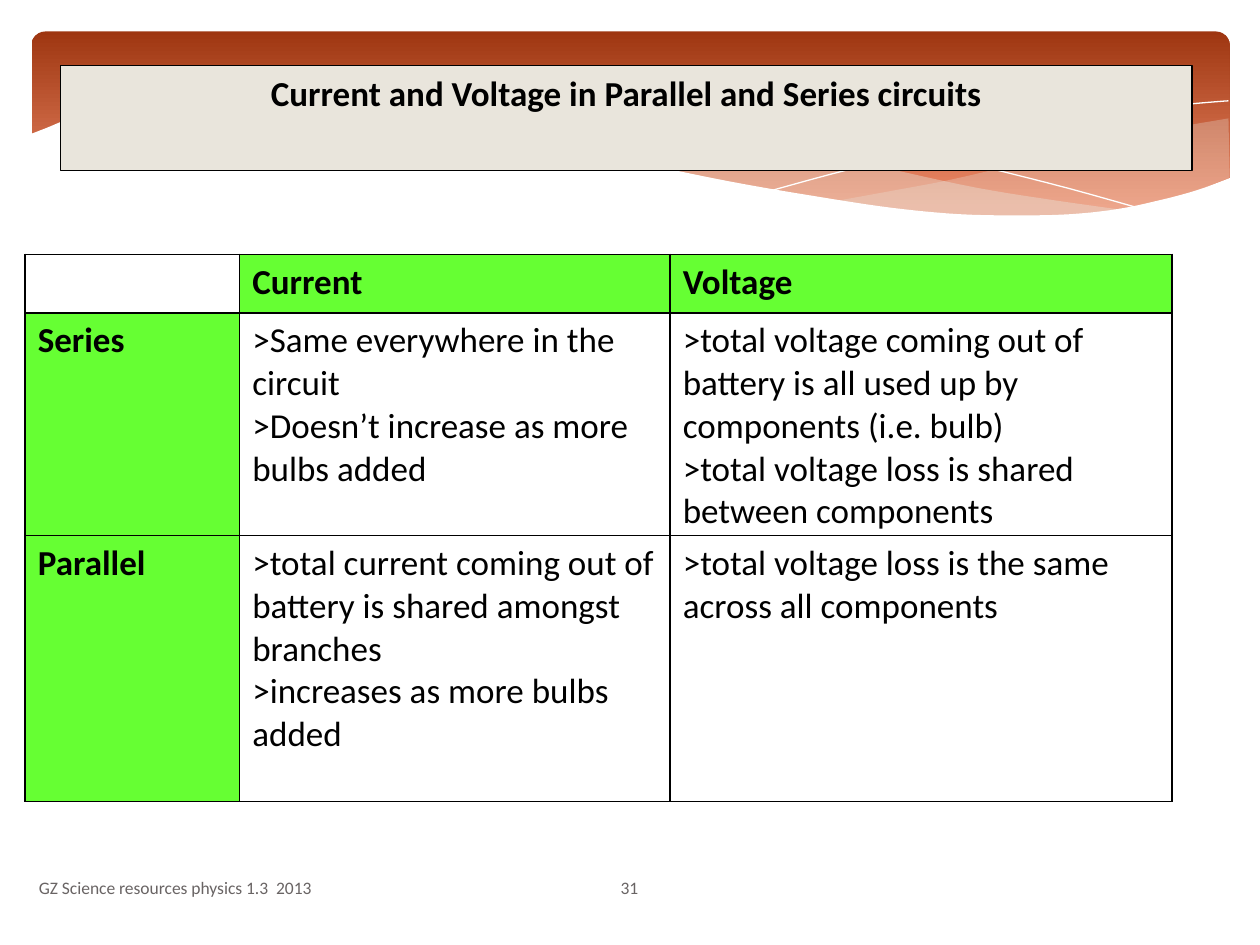
"""Build the slide comparing current and voltage in series and parallel circuits."""
from dataclasses import dataclass
from typing import Optional

from lxml.etree import SubElement
from pptx import Presentation
from pptx.dml.color import RGBColor
from pptx.enum.shapes import MSO_SHAPE as Shape
from pptx.enum.text import MSO_ANCHOR as Anchor, MSO_AUTO_SIZE as AutoSize, PP_ALIGN as Align
from pptx.oxml.ns import qn
from pptx.util import Pt

BLACK = RGBColor(0x00, 0x00, 0x00)
WHITE = RGBColor(0xFF, 0xFF, 0xFF)
GREEN = RGBColor(0x66, 0xFF, 0x33)
CREAM = RGBColor(0xE9, 0xE5, 0xDC)
GREY = RGBColor(0x69, 0x64, 0x64)
RUST = RGBColor(0x9E, 0x36, 0x11)
CORAL = RGBColor(0xEF, 0x8C, 0x6A)
FONT = "Calibri"


@dataclass
class Wave:
    """One curved layer of the banner, made of smooth edges joined in turn."""
    edges: list
    fill: Optional[RGBColor] = None
    alpha: int = 100


@dataclass
class Label:
    """A line of footer text."""
    text: str
    left: float
    width: float
    align: Align


WAVES = [
    Wave([[(702, 67.7), (673, 72.7), (641.5, 79.2), (620, 85), (579.6, 94.3), (542, 103),
           (508, 109.4), (476, 115.2)],
          [(476, 115.2), (507.6, 118.8), (536.4, 121.7), (570, 123.8), (601, 123.8),
           (628, 121.7), (651.6, 117.4), (678, 110.9), (702.7, 101.5)]], CREAM, 29),
    Wave([[(643, 120.2), (602.6, 114.5), (558, 107.3), (508.3, 96.5), (452.9, 83.5),
           (409.7, 73.4), (370, 66.2), (334.8, 61.9), (302.4, 59), (273.6, 57.6),
           (247.7, 57.6), (225.4, 59), (206, 61.9)],
          [(206, 61.9), (246, 67.7), (291, 76.3), (323.3, 83.5), (381.6, 97.2),
           (432.7, 108), (478.8, 115.9), (519.8, 121), (556.6, 123.8), (589, 124.6),
           (617, 123.1), (643, 120.2)]], CREAM, 40),
    Wave([[(222.5, 64.8), (236.2, 61.9), (261.4, 59.8), (299.5, 58.3), (352, 60.5),
           (400.3, 65.5), (458, 74.2), (523.4, 86.4), (598.3, 104.4), (653, 119.5)]]),
    Wave([[(441.4, 108.7), (483.8, 97.2), (538.6, 84.2), (580.3, 74.9), (623.5, 67),
           (655.2, 61.9), (684.7, 59), (702, 57.6)]]),
    Wave([[(703.4, 101.5), (684, 108.7), (662.4, 114.5), (638.6, 119.5), (612, 122.4),
           (582.5, 123.1), (548, 122.4), (509.8, 118.8), (466.6, 112.3), (416.9, 103.7),
           (362, 92.2), (321.8, 82.1), (281.5, 73.4), (244.8, 66.2), (210.2, 61.2),
           (180, 58.3), (152, 56.2), (127.4, 56.2), (95, 58.3), (68.4, 61.2),
           (42.5, 67), (25.9, 73.4), (16.6, 77)],
          [(16.6, 161), (703.4, 161)]], WHITE),
]
LABELS = [
    Label("GZ Science resources physics 1.3  2013", 15.1, 298, Align.LEFT),
    Label("31", 314, 91.4, Align.CENTER),
]
COLUMNS = [122.6, 246, 286.8]
ROWS = [33.4, 127, 152]
CELLS = [
    ["", "Current", "Voltage"],
    ["Series",
     ">Same everywhere in the circuit\n>Doesn’t increase as more bulbs added",
     ">total voltage coming out of battery is all used up by components (i.e. bulb)\n"
     ">total voltage loss is shared between components"],
    ["Parallel",
     ">total current coming out of battery is shared amongst branches\n"
     ">increases as more bulbs added",
     ">total voltage loss is the same across all components"],
]


def smooth(points: list, steps: int = 5) -> list:
    """Return a Catmull-Rom curve through the points."""
    ends = [points[0], *points, points[-1]]
    curve = [points[0]]
    for a, b, c, d in zip(ends, ends[1:], ends[2:], ends[3:]):
        for t in (i / steps for i in range(1, steps + 1)):
            curve.append(tuple(
                (2 * q + (r - p) * t + (2 * p - 5 * q + 4 * r - u) * t ** 2
                 + (3 * q - p - 3 * r + u) * t ** 3) / 2
                for p, q, r, u in zip(a, b, c, d)))
    return curve


def style_text(tf, size: float, color: RGBColor, bold: bool = False,
               align: Align = Align.LEFT) -> None:
    """Format every run of a text frame alike."""
    for p in tf.paragraphs:
        p.alignment = align
        for r in p.runs:
            r.font.name, r.font.size, r.font.bold = FONT, Pt(size), bold
            r.font.color.rgb = color


def add_banner(s) -> None:
    """Draw the rounded gradient panel behind the waves."""
    sp = s.shapes.add_shape(Shape.ROUNDED_RECTANGLE, Pt(18), Pt(18), Pt(684.7), Pt(112.3))
    sp.adjustments[0] = 0.07
    sp.shadow.inherit = False
    sp.line.fill.background()
    sp.fill.gradient()
    sp.fill.gradient_angle = 270
    for stop, color, position in zip(sp.fill.gradient_stops, (RUST, CORAL), (0, 0.9)):
        stop.color.rgb, stop.position = color, position


def add_wave(s, wave: Wave) -> None:
    """Draw a filled wave, or a thin white line when it has no fill."""
    points = [(Pt(x), Pt(y)) for edge in wave.edges for x, y in smooth(edge)]
    builder = s.shapes.build_freeform(*points[0])
    builder.add_line_segments(points[1:], close=wave.fill is not None)
    sp = builder.convert_to_shape()
    sp.shadow.inherit = False
    if wave.fill is None:
        sp.fill.background()
        sp.line.color.rgb = WHITE
        sp.line.width = Pt(0)
        return
    sp.line.fill.background()
    sp.fill.solid()
    sp.fill.fore_color.rgb = wave.fill
    if wave.alpha < 100:
        color = next(sp.element.iter(qn("a:srgbClr")))
        SubElement(color, qn("a:alpha"), val=str(wave.alpha * 1000))


def add_label(s, label: Label) -> None:
    """Add one footer text."""
    sp = s.shapes.add_textbox(Pt(label.left), Pt(492.5), Pt(label.width), Pt(28.8))
    tf = sp.text_frame
    tf.word_wrap = True
    tf.vertical_anchor = Anchor.MIDDLE
    tf.text = label.text
    style_text(tf, 10, GREY, align=label.align)


def add_borders(cell) -> None:
    """Give a cell thin black edges, placed before its fill."""
    tc_pr = cell._tc.get_or_add_tcPr()
    for i, side in enumerate(("lnL", "lnR", "lnT", "lnB")):
        ln = SubElement(tc_pr, qn(f"a:{side}"), w=str(Pt(1)))
        fill = SubElement(ln, qn("a:solidFill"))
        SubElement(fill, qn("a:srgbClr"), val=str(BLACK))
        tc_pr.insert(i, ln)


def add_comparison(s) -> None:
    """Add the table of current and voltage rules."""
    frame = s.shapes.add_table(len(ROWS), len(COLUMNS), Pt(14.4), Pt(145.4),
                               Pt(sum(COLUMNS)), Pt(sum(ROWS)))
    table = frame.table
    table.first_row = table.horz_banding = False
    for column, width in zip(table.columns, COLUMNS):
        column.width = Pt(width)
    for i, (row, height) in enumerate(zip(table.rows, ROWS)):
        row.height = Pt(height)
        for j, cell in enumerate(row.cells):
            header = i == 0 or j == 0
            cell.text = CELLS[i][j]
            style_text(cell.text_frame, 20, BLACK, header)
            if i == j == 0:
                cell.fill.background()
            else:
                cell.fill.solid()
                cell.fill.fore_color.rgb = GREEN if header else WHITE
            add_borders(cell)


def add_title(s) -> None:
    """Fill the title placeholder and bring it to the front."""
    sp = s.shapes.title
    sp.left, sp.top, sp.width, sp.height = Pt(34.6), Pt(37.4), Pt(646.6), Pt(31.7)
    sp.fill.solid()
    sp.fill.fore_color.rgb = CREAM
    sp.line.color.rgb = BLACK
    sp.line.width = Pt(0.75)
    tf = sp.text_frame
    tf.text = "Current and Voltage in Parallel and Series circuits"
    tf.word_wrap = True
    tf.auto_size = AutoSize.SHAPE_TO_FIT_TEXT
    tf.vertical_anchor = Anchor.TOP
    style_text(tf, 20, BLACK, True, Align.CENTER)
    sp.element.getparent().append(sp.element)


def main() -> None:
    """Assemble and save the slide."""
    prs = Presentation()
    prs.slide_width, prs.slide_height = Pt(720), Pt(540)
    s = prs.slides.add_slide(prs.slide_layouts[5])
    add_banner(s)
    for wave in WAVES:
        add_wave(s, wave)
    for label in LABELS:
        add_label(s, label)
    add_comparison(s)
    add_title(s)
    prs.save("out.pptx")


if __name__ == "__main__":
    main()
